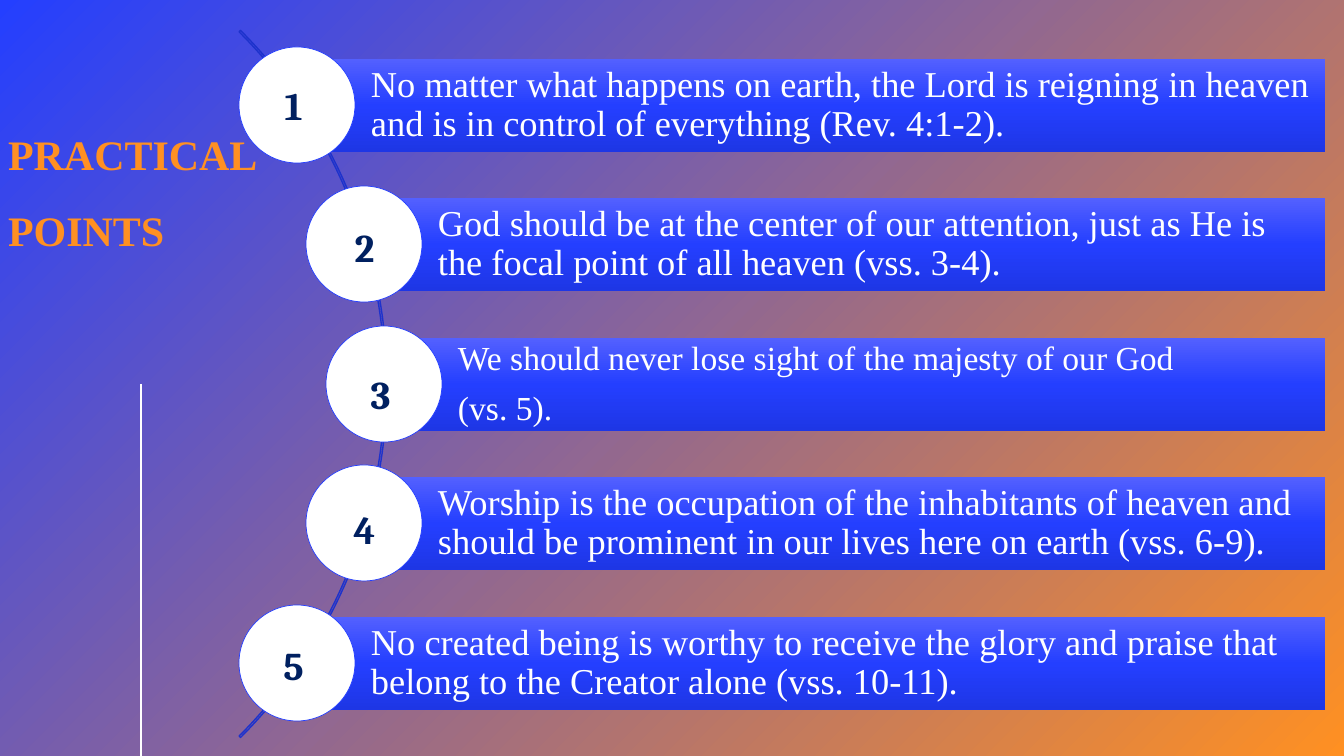
"""Build the "Practical Points" slide with five numbered bars along an arc."""
from dataclasses import dataclass

from lxml import etree
from pptx import Presentation
from pptx.dml.color import RGBColor
from pptx.dml.fill import FillFormat
from pptx.enum.shapes import MSO_CONNECTOR, MSO_SHAPE
from pptx.enum.text import MSO_ANCHOR, MSO_AUTO_SIZE, PP_ALIGN
from pptx.oxml.ns import qn
from pptx.oxml.xmlchemy import BaseOxmlElement
from pptx.shapes.autoshape import Shape
from pptx.slide import Slide
from pptx.text.text import TextFrame
from pptx.util import Emu, Pt

RECT, OVAL, ARC = MSO_SHAPE.RECTANGLE, MSO_SHAPE.OVAL, MSO_SHAPE.BLOCK_ARC
STRAIGHT = MSO_CONNECTOR.STRAIGHT
MIDDLE, BOTTOM = MSO_ANCHOR.MIDDLE, MSO_ANCHOR.BOTTOM
LEFT, CENTER = PP_ALIGN.LEFT, PP_ALIGN.CENTER
NO_FIT = MSO_AUTO_SIZE.NONE

SLIDE_W, SLIDE_H = 1344, 756
EMU_PER_PX = 12192000 / SLIDE_W
COLORS = {
    "blue": "243FFF",
    "light_blue": "5360FF",
    "deep_blue": "1E36E5",
    "arc": "1D32CC",
    "navy": "002060",
    "orange": "FF9022",
    "white": "FFFFFF",
}
BODY_FONT, NUMBER_FONT = "Times New Roman", "Cambria"
BAR_TOP, BAR_H, BAR_RIGHT = 59, 93, 1325
CIRCLE_TOP, CIRCLE_D = 47, 116
TWO_PITCHES = 279
NUMBER_W, NUMBER_H = 71, 57


@dataclass(frozen=True)
class Point:
    """One numbered bar: left edge, corner of its number, text and size."""

    left: int
    number_x: int
    number_y: int
    lines: tuple[str, ...]
    size: int = 26


POINTS = [
    Point(297, 258, 76, ("No matter what happens on earth, the Lord is reigning in heaven "
                         "and is in control of everything (Rev. 4:1-2).",)),
    Point(364, 329, 218, ("God should be at the center of our attention, just as He is "
                          "the focal point of all heaven (vss. 3-4).",)),
    Point(384, 345, 365, ("We should never lose sight of the majesty of our God",
                          "(vs. 5)."), 24),
    Point(364, 329, 500, ("Worship is the occupation of the inhabitants of heaven and "
                          "should be prominent in our lives here on earth (vss. 6-9).",)),
    Point(297, 258, 636, ("No created being is worthy to receive the glory and praise that "
                          "belong to the Creator alone (vss. 10-11).",)),
]


def px(n: int) -> Emu:
    """Turn pixels into EMU."""
    return Emu(round(n * EMU_PER_PX))


def rgb(name: str) -> RGBColor:
    """Look up a named colour."""
    return RGBColor.from_string(COLORS[name])


def set_gradient(fill: FillFormat, owner: BaseOxmlElement, names: list[str], angle: int) -> None:
    """Give a fill evenly spaced gradient stops at a clockwise angle."""
    fill.gradient()
    fill.gradient_angle = 360 - angle
    stops = next(owner.iter(qn("a:gsLst")))
    for old in list(stops):
        stops.remove(old)
    for i, name in enumerate(names):
        stop = etree.SubElement(stops, qn("a:gs"), pos=str(100000 * i // (len(names) - 1)))
        etree.SubElement(stop, qn("a:srgbClr"), val=COLORS[name])


def write(tf: TextFrame, lines: tuple[str, ...], *, size: int, color: str,
          font: str = BODY_FONT, bold: bool = False, align: PP_ALIGN = LEFT,
          anchor: MSO_ANCHOR = MIDDLE, spacing: float | Pt = 1.0, after: float = 0,
          insets: tuple[int, int, int, int] = (0, 0, 0, 0)) -> None:
    """Write one paragraph per line with the given format."""
    tf.word_wrap, tf.auto_size, tf.vertical_anchor = True, NO_FIT, anchor
    tf.margin_left, tf.margin_top, tf.margin_right, tf.margin_bottom = map(px, insets)
    for i, line in enumerate(lines):
        p = tf.add_paragraph() if i else tf.paragraphs[0]
        p.alignment, p.line_spacing = align, spacing
        p.space_before, p.space_after = Pt(0), Pt(after)
        r = p.add_run()
        r.text = line
        r.font.name, r.font.size, r.font.bold = font, Pt(size), bold
        r.font.color.rgb = rgb(color)


def add_shape(s: Slide, kind: MSO_SHAPE, x: int, y: int, w: int, h: int,
              fill: str | None = None, line: str | None = None, width: float = 1) -> Shape:
    """Add a flat preset shape with an optional fill and outline."""
    sp = s.shapes.add_shape(kind, px(x), px(y), px(w), px(h))
    sp.shadow.inherit = False
    if fill:
        sp.fill.solid()
        sp.fill.fore_color.rgb = rgb(fill)
    else:
        sp.fill.background()
    if line:
        sp.line.color.rgb = rgb(line)
        sp.line.width = Pt(width)
    else:
        sp.line.fill.background()
    return sp


def add_title(s: Slide) -> None:
    """Place and format the title."""
    sp = s.shapes.title
    sp.left, sp.top, sp.width, sp.height = px(8), px(178), px(381), px(77)
    write(sp.text_frame, ("PRACTICAL", "POINTS"), size=30, color="orange", bold=True,
          anchor=BOTTOM, spacing=Pt(54))


def add_side_line(s: Slide) -> None:
    """Draw the white vertical line at the left."""
    line = s.shapes.add_connector(STRAIGHT, px(141), px(384), px(141), px(SLIDE_H))
    line.line.color.rgb = rgb("white")
    line.line.width = Pt(2)
    etree.SubElement(line._element.spPr, qn("a:effectLst"))


def add_arc(s: Slide) -> None:
    """Draw the thin arc that links the circles."""
    arc = add_shape(s, ARC, -613, -116, 1000, 1000, line="arc")
    for i, value in enumerate((189, 27, 0.002)):
        arc.adjustments[i] = value


def add_point(s: Slide, index: int, point: Point) -> None:
    """Draw one bar with its circle and number."""
    offset = index * TWO_PITCHES // 2
    bar = add_shape(s, RECT, point.left, BAR_TOP + offset, BAR_RIGHT - point.left, BAR_H)
    set_gradient(bar.fill, bar._element, ["light_blue", "blue", "deep_blue"], 90)
    write(bar.text_frame, point.lines, size=point.size, color="white", spacing=0.9,
          after=9.5, insets=(74, 7, 7, 7))
    add_shape(s, OVAL, point.left - CIRCLE_D // 2, CIRCLE_TOP + offset, CIRCLE_D, CIRCLE_D,
              fill="white", line="blue", width=0.5)
    number = s.shapes.add_textbox(px(point.number_x), px(point.number_y),
                                  px(NUMBER_W), px(NUMBER_H))
    write(number.text_frame, (str(index + 1),), size=28, color="navy", font=NUMBER_FONT,
          bold=True, align=CENTER)


def main() -> None:
    """Build and save the slide."""
    prs = Presentation()
    prs.slide_width, prs.slide_height = px(SLIDE_W), px(SLIDE_H)
    s = prs.slides.add_slide(prs.slide_layouts.get_by_name("Title Only"))
    set_gradient(s.background.fill, s._element, ["blue", "orange"], 45)
    add_title(s)
    add_side_line(s)
    add_arc(s)
    for index, point in enumerate(POINTS):
        add_point(s, index, point)
    prs.save("out.pptx")


if __name__ == "__main__":
    main()
